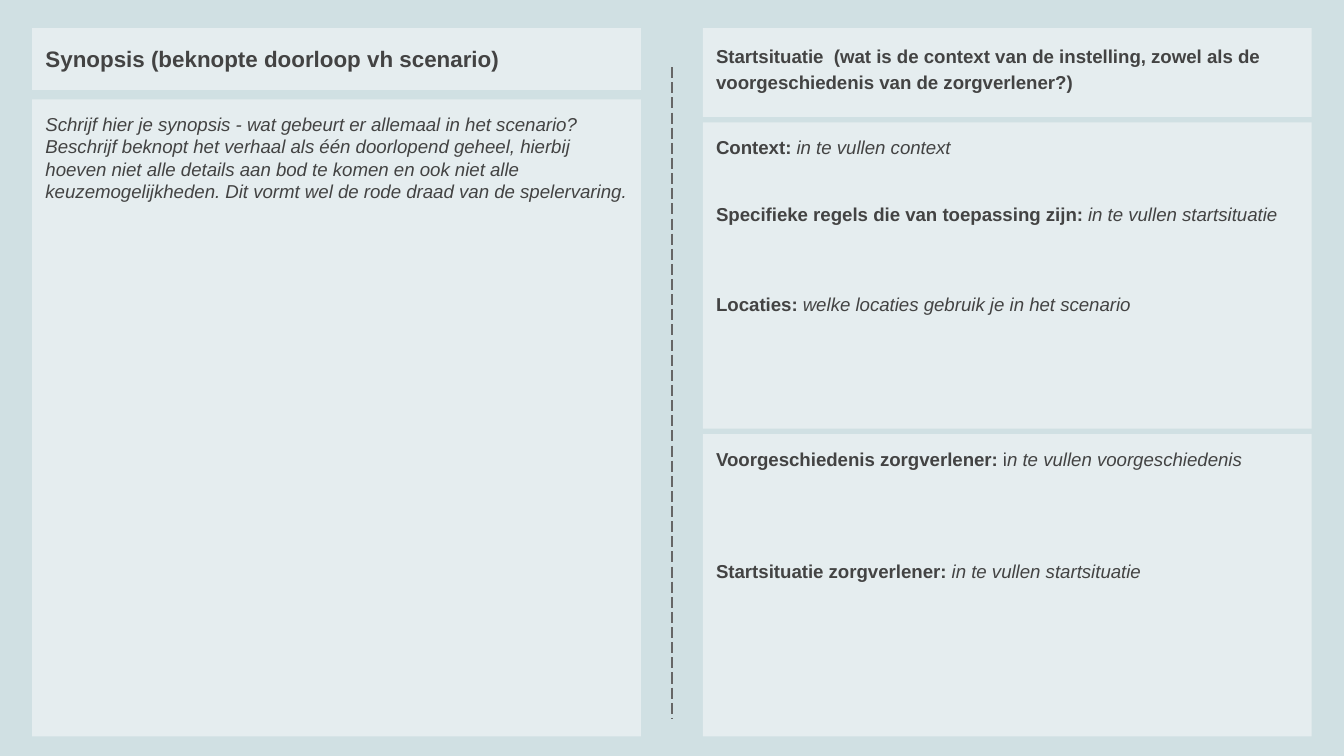
"""Build a scenario worksheet slide with a synopsis and a starting situation."""
import pptx
import pptx.dml.color
import pptx.enum.dml
import pptx.enum.shapes
import pptx.enum.text
import pptx.oxml.ns
import pptx.util
from lxml import etree

Inches = pptx.util.Inches
Pt = pptx.util.Pt
RGBColor = pptx.dml.color.RGBColor
qn = pptx.oxml.ns.qn

BACKGROUND = RGBColor(0xD0, 0xE0, 0xE3)
PANEL = RGBColor(0xFF, 0xFF, 0xFF)
INK = RGBColor(0x43, 0x43, 0x43)
DIVIDER = RGBColor(0x66, 0x66, 0x66)

LEFT, RIGHT, COLUMN_WIDTH = 0.24, 5.23, 4.53
TOP, BOTTOM = 0.21, 5.48
BLANK_LINE = 12


class Worksheet:
    font_name = "Arial"
    opacity = 45

    def __init__(self, deck):
        self.page = deck.slides.add_slide(deck.slide_layouts[6])
        fill = self.page.background.fill
        fill.solid()
        fill.fore_color.rgb = BACKGROUND

    def panel(self, left, top, bottom):
        box = self.page.shapes.add_shape(
            pptx.enum.shapes.MSO_SHAPE.RECTANGLE,
            Inches(left), Inches(top), Inches(COLUMN_WIDTH), Inches(bottom - top))
        box.shadow.inherit = False
        box.line.fill.background()
        box.fill.solid()
        box.fill.fore_color.rgb = PANEL
        color = box._element.spPr.find(qn("a:solidFill"))[0]
        etree.SubElement(color, qn("a:alpha"), val=str(self.opacity * 1000))
        frame = box.text_frame
        frame.word_wrap = True
        frame.vertical_anchor = pptx.enum.text.MSO_ANCHOR.TOP
        frame.margin_left = frame.margin_right = Inches(0.1)
        frame.margin_top = frame.margin_bottom = Inches(0.1)
        return frame

    def style(self, para, size):
        para.alignment = pptx.enum.text.PP_ALIGN.LEFT
        para.font.name = self.font_name
        para.font.size = Pt(size)
        para.font.color.rgb = INK

    def heading(self, left, bottom, text, size):
        para = self.panel(left, TOP, bottom).paragraphs[0]
        self.style(para, size)
        para.font.bold = True
        para.line_spacing = 1.15
        para.space_after = Pt(12)
        para.add_run().text = text

    def prompts(self, left, top, bottom, entries):
        frame = self.panel(left, top, bottom)
        for index, (blank_lines, label, plain, hint) in enumerate(entries):
            para = frame.add_paragraph() if index else frame.paragraphs[0]
            self.style(para, 10)
            para.space_before = Pt(blank_lines * BLANK_LINE)
            for text, bold, italic in ((label, True, False), (plain, False, False), (hint, False, True)):
                if text:
                    span = para.add_run()
                    span.text = text
                    span.font.bold = bold
                    span.font.italic = italic

    def divider(self, x, top, bottom):
        line = self.page.shapes.add_connector(
            pptx.enum.shapes.MSO_CONNECTOR.STRAIGHT,
            Inches(x), Inches(top), Inches(x), Inches(bottom))
        line.line.color.rgb = DIVIDER
        line.line.width = Pt(0.75)
        line.line.dash_style = pptx.enum.dml.MSO_LINE.LONG_DASH
        etree.SubElement(line._element.spPr, qn("a:effectLst"))


def main():
    deck = pptx.Presentation()
    deck.slide_width = Inches(10)
    deck.slide_height = deck.slide_width * 9 // 16
    sheet = Worksheet(deck)

    sheet.heading(LEFT, 0.67, "Synopsis (beknopte doorloop vh scenario)", 12)
    sheet.heading(
        RIGHT, 0.87,
        "Startsituatie  (wat is de context van de instelling, zowel als de "
        "voorgeschiedenis van de zorgverlener?)", 10)
    sheet.divider(5, 0.5, 5.35)
    sheet.prompts(RIGHT, 0.91, 3.19, [
        (0, "Context: ", "", "in te vullen context"),
        (2, "Specifieke regels die van toepassing zijn: ", "", "in te vullen startsituatie"),
        (3, "Locaties: ", "", "welke locaties gebruik je in het scenario"),
    ])
    sheet.prompts(LEFT, 0.74, BOTTOM, [
        (0, "", "",
         "Schrijf hier je synopsis - wat gebeurt er allemaal in het scenario? "
         "Beschrijf beknopt het verhaal als één doorlopend geheel, hierbij hoeven "
         "niet alle details aan bod te komen en ook niet alle keuzemogelijkheden. "
         "Dit vormt wel de rode draad van de spelervaring."),
    ])
    sheet.prompts(RIGHT, 3.23, BOTTOM, [
        (0, "Voorgeschiedenis zorgverlener:", " i", "n te vullen voorgeschiedenis"),
        (4, "Startsituatie zorgverlener: ", "", "in te vullen startsituatie"),
    ])
    deck.save("out.pptx")


if __name__ == "__main__":
    main()
